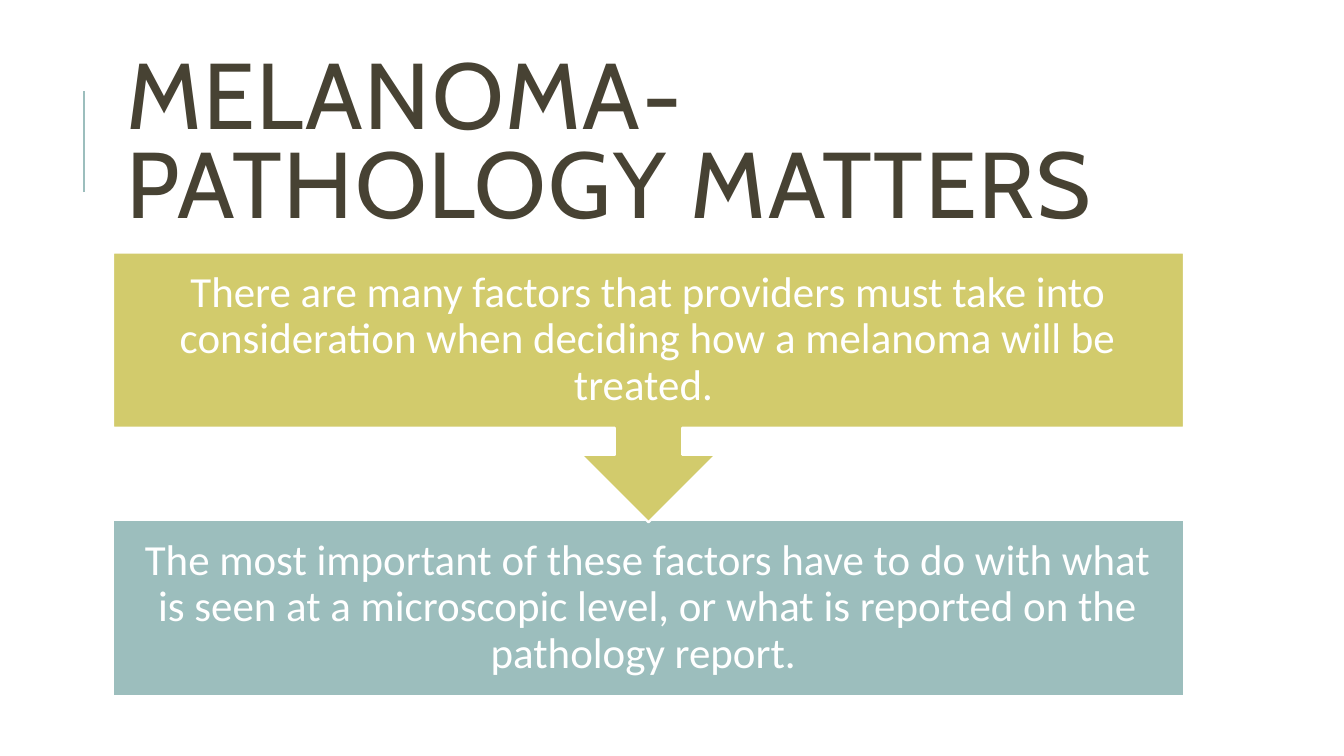
"""Build the melanoma pathology slide with a two-step callout flow."""
from pptx import Presentation
from pptx.dml.color import RGBColor
from pptx.enum import shapes, text
from pptx.oxml import xmlchemy
from pptx.util import Pt

TITLE = "MELANOMA- PATHOLOGY MATTERS"
BROWN = RGBColor(0x47, 0x42, 0x33)
OLIVE = RGBColor(0xD2, 0xCB, 0x6C)
TEAL = RGBColor(0x9C, 0xBE, 0xBD)
WHITE = RGBColor(0xFF, 0xFF, 0xFF)
SHAPE = shapes.MSO_SHAPE
LEFT, WIDTH, TEXT_HEIGHT = 60.5, 573.8, 94
STEPS = [
    dict(
        words="The most important of these factors have to do with what is seen at a "
        "microscopic level, or what is reported on the pathology report. ",
        kind=SHAPE.RECTANGLE, top=278.8, height=TEXT_HEIGHT, turn=0, color=TEAL,
    ),
    dict(
        words="There are many factors that providers must take into consideration when "
        "deciding how a melanoma will be treated. ",
        kind=SHAPE.UP_ARROW_CALLOUT, top=135.2, height=144.6, turn=180, color=OLIVE,
    ),
]


def write(sp, words, *, font, size, color, align, line_spacing, inset=None, tracking=0):
    tf = sp.text_frame
    tf.word_wrap = True
    tf.auto_size = text.MSO_AUTO_SIZE.NONE
    tf.vertical_anchor = text.MSO_ANCHOR.MIDDLE
    if inset is not None:
        tf.margin_left = tf.margin_right = tf.margin_top = tf.margin_bottom = Pt(inset)
    p = tf.paragraphs[0]
    p.alignment, p.line_spacing = align, line_spacing
    r = p.add_run()
    r.text = words
    r.font.name, r.font.size = font, Pt(size)
    r.font.color.rgb = color
    if tracking:
        r.font._element.set("spc", str(tracking * 100))


def add_step(s, words, kind, top, height, turn, color):
    sp = s.shapes.add_shape(kind, Pt(LEFT), Pt(top), Pt(WIDTH), Pt(height))
    sp.rotation = turn
    sp.shadow.inherit = False
    sp.fill.solid()
    sp.fill.fore_color.rgb = color
    sp.line.color.rgb = WHITE
    sp.line.width = Pt(1.25)
    label = s.shapes.add_textbox(Pt(LEFT), Pt(top), Pt(WIDTH), Pt(TEXT_HEIGHT))
    write(label, words, font="Calibri", size=23, color=WHITE,
          align=text.PP_ALIGN.CENTER, line_spacing=0.9, inset=13)


def main():
    prs = Presentation()
    prs.slide_width, prs.slide_height = Pt(720), Pt(405)
    s = prs.slides.add_slide(prs.slide_layouts[5])

    rule = s.shapes.add_connector(
        shapes.MSO_CONNECTOR.STRAIGHT, Pt(45), Pt(103), Pt(45), Pt(49))
    rule.line.color.rgb = TEAL
    rule.line.width = Pt(1.5)
    rule._element.spPr.append(xmlchemy.OxmlElement("a:effectLst"))

    title = s.shapes.title
    title.left, title.top = Pt(LEFT), Pt(34.5)
    title.width, title.height = Pt(WIDTH), Pt(88.5)
    write(title, TITLE, font="Cabin", size=50, color=BROWN,
          align=text.PP_ALIGN.LEFT, line_spacing=0.8, tracking=1)

    for step in STEPS:
        add_step(s, **step)
    prs.save("out.pptx")


if __name__ == "__main__":
    main()
